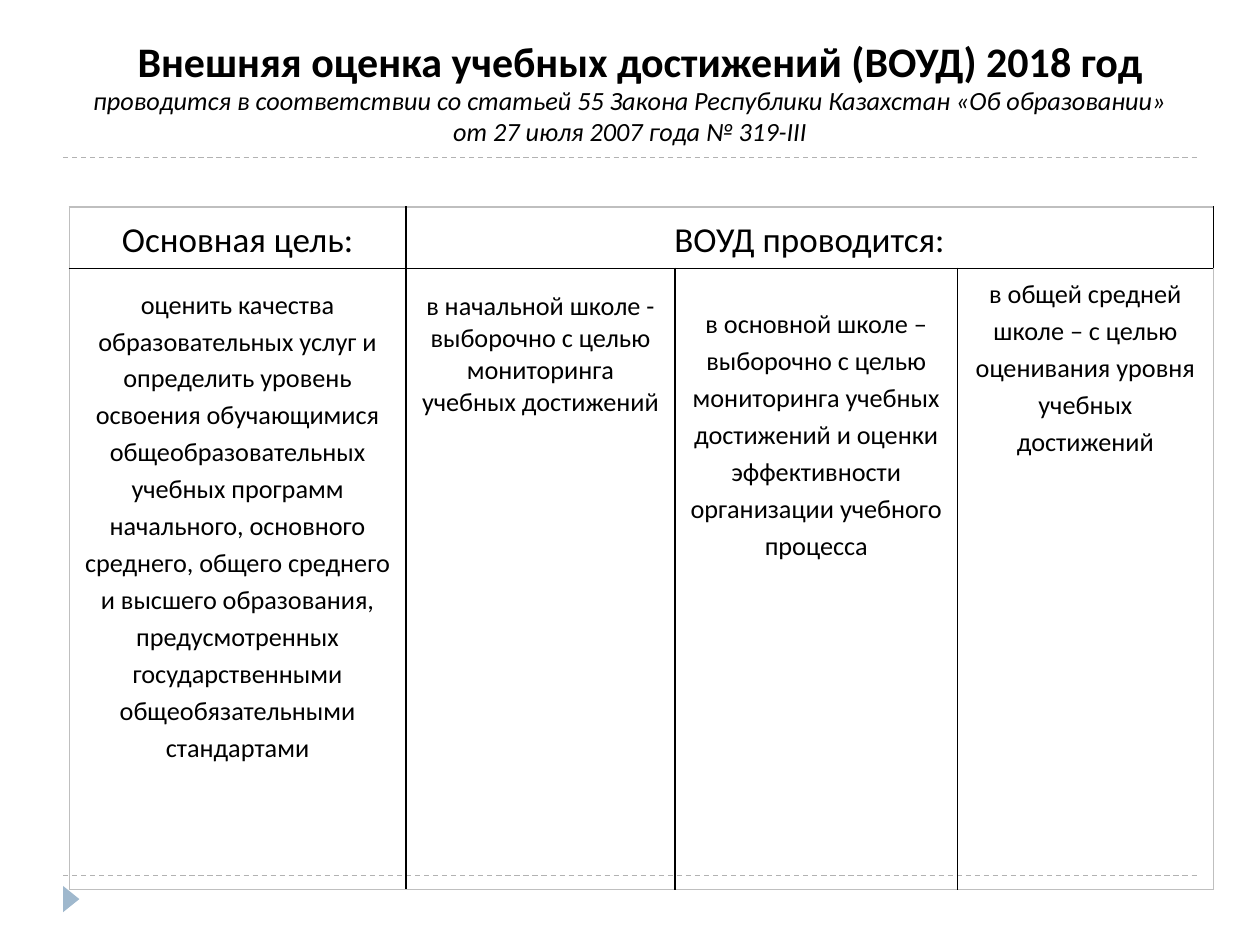
from lxml.etree import SubElement
from pptx import Presentation
from pptx.dml.color import RGBColor
from pptx.enum.dml import MSO_LINE
from pptx.enum.shapes import MSO_CONNECTOR, MSO_SHAPE
from pptx.enum.text import MSO_ANCHOR, PP_ALIGN
from pptx.oxml import parse_xml
from pptx.oxml.ns import nsdecls, qn
from pptx.util import Cm, Pt

TITLE = "Внешняя оценка учебных достижений (ВОУД) 2018 год"
BASIS = ("проводится в соответствии со статьей 55 Закона Республики Казахстан "
         "«Об образовании»\vот 27 июля 2007 года № 319-III")
HEADS = ["Основная цель:", "ВОУД проводится:"]
GOALS = [
    ("оценить качества образовательных услуг и определить уровень освоения "
     "обучающимися общеобразовательных учебных программ начального, основного "
     "среднего, общего среднего и высшего образования, предусмотренных "
     "государственными общеобязательными стандартами", 0.32, 1.15),
    ("в начальной школе - выборочно с целью мониторинга учебных достижений",
     0.44, 1),
    ("в основной школе – выборочно с целью мониторинга учебных достижений и "
     "оценки эффективности организации учебного процесса", 0.71, 1.15),
    ("в общей средней школе – с целью оценивания уровня учебных достижений",
     0.11, 1.15),
]
COLS = [6.78, 5.43, 5.69, 5.16]
ROWS = [1.24, 12.52]
RULES = [3.17, 17.65]

THEME = {"font": "Calibri", "ink": "000000", "rule": "B2B2B2",
         "edge": "BFBFBF", "mark": "9FB8CD",
         "title": 24, "head": 20, "body": 15}


def color(name):
    return RGBColor.from_string(THEME[name])


def write(frame, text, size, bold=False, italic=False, space=1):
    frame.text = text
    frame.word_wrap = True
    for para in frame.paragraphs:
        para.alignment = PP_ALIGN.CENTER
        para.line_spacing = space
        for run in para.runs:
            font = run.font
            font.name, font.size = THEME["font"], Pt(THEME[size])
            font.bold, font.italic = bold, italic
            font.color.rgb = color("ink")


def place(shape, left, top, width, height):
    shape.left, shape.top = Cm(left), Cm(top)
    shape.width, shape.height = Cm(width), Cm(height)


def border(cell, row, col):
    outer = [col == 0, col == len(COLS) - 1, row == 0, row == len(ROWS) - 1]
    for spot, (side, edge) in enumerate(zip("LRTB", outer)):
        tone = THEME["edge" if edge else "ink"]
        line = parse_xml(
            f'<a:ln{side} {nsdecls("a")} w="12700"><a:solidFill>'
            f'<a:srgbClr val="{tone}"/></a:solidFill></a:ln{side}>')
        cell._tc.get_or_add_tcPr().insert(spot, line)


def rule(slide, top):
    line = slide.shapes.add_connector(
        MSO_CONNECTOR.STRAIGHT, Cm(1.27), Cm(top), Cm(24.13), Cm(top))
    line.line.color.rgb = color("rule")
    line.line.width = Pt(0.75)
    line.line.dash_style = MSO_LINE.DASH
    SubElement(line._element.spPr, qn("a:effectLst"))


def grid(slide):
    table = slide.shapes.add_table(
        len(ROWS), len(COLS), Cm(1.4), Cm(4.17),
        Cm(sum(COLS)), Cm(sum(ROWS))).table
    table.first_row = table.horz_banding = False
    for col, width in zip(table.columns, COLS):
        col.width = Cm(width)
    for row, height in zip(table.rows, ROWS):
        row.height = Cm(height)
    for r in range(len(ROWS)):
        for c in range(len(COLS)):
            cell = table.cell(r, c)
            cell.fill.background()
            cell.margin_top = cell.margin_bottom = Cm(0.1)
            border(cell, r, c)
    table.cell(0, 1).merge(table.cell(0, len(COLS) - 1))
    for c, text in enumerate(HEADS):
        cell = table.cell(0, c)
        cell.vertical_anchor = MSO_ANCHOR.MIDDLE
        write(cell.text_frame, text, "head", space=1.15)
    for c, (text, inset, space) in enumerate(GOALS):
        cell = table.cell(1, c)
        cell.vertical_anchor = MSO_ANCHOR.TOP
        cell.margin_top = Cm(inset)
        write(cell.text_frame, text, "body", space=space)


def main():
    deck = Presentation()
    deck.slide_width, deck.slide_height = Cm(25.4), Cm(19.05)
    slide = deck.slides.add_slide(deck.slide_layouts[5])
    for top in RULES:
        rule(slide, top)
    mark = slide.shapes.add_shape(
        MSO_SHAPE.ISOSCELES_TRIANGLE, Cm(1.17), Cm(17.96), Cm(0.53), Cm(0.33))
    mark.rotation = 90
    mark.shadow.inherit = False
    mark.fill.solid()
    mark.fill.fore_color.rgb = color("mark")
    mark.line.fill.background()
    title = slide.shapes.title
    place(title, 1.4, 0.58, 23.01, 1.27)
    title.text_frame.vertical_anchor = MSO_ANCHOR.TOP
    write(title.text_frame, TITLE, "title", bold=True)
    basis = slide.shapes.add_textbox(Cm(0.99), Cm(1.57), Cm(23.42), Cm(1.55))
    write(basis.text_frame, BASIS, "body", italic=True)
    grid(slide)
    deck.save("out.pptx")


if __name__ == "__main__":
    main()
